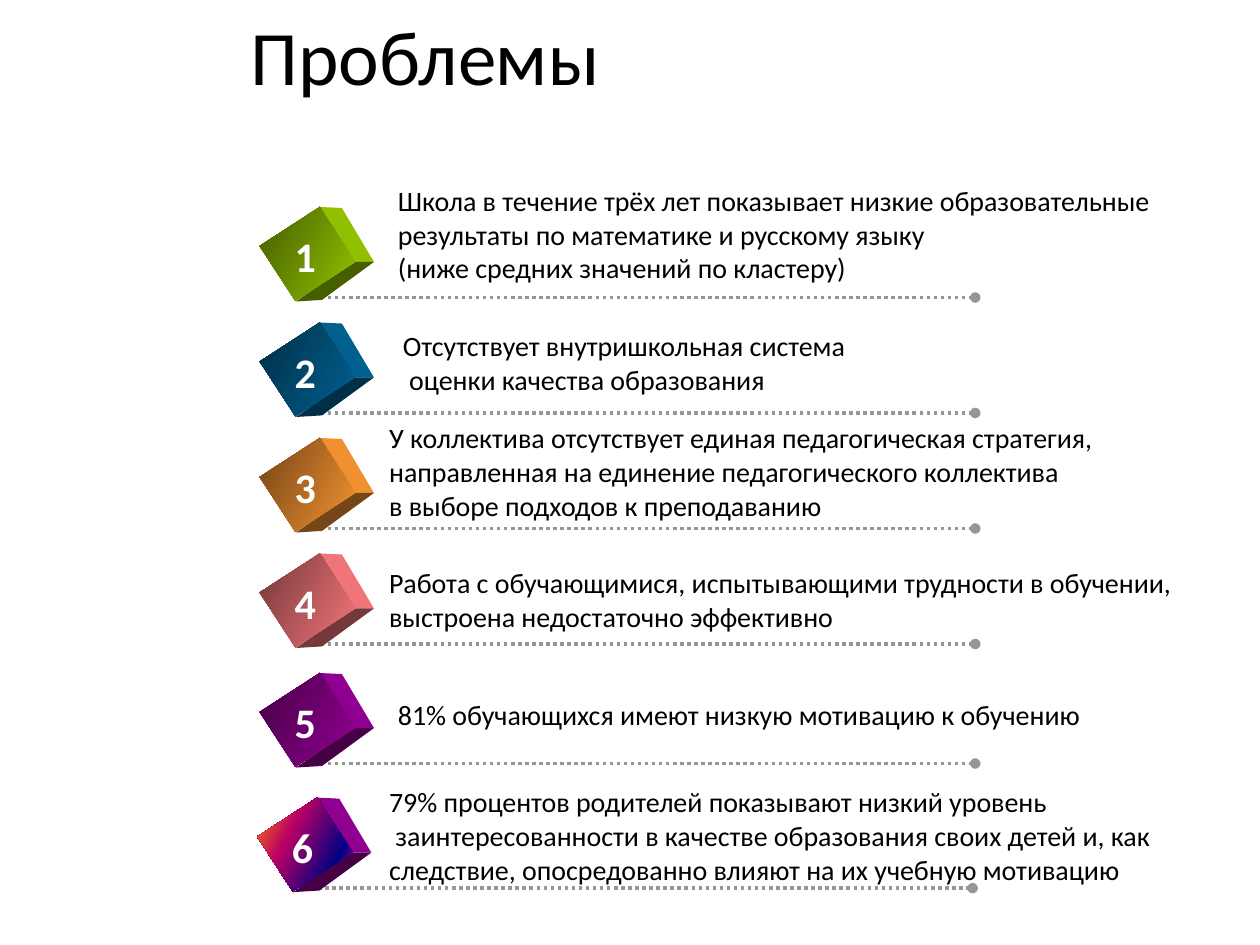
from copy import deepcopy
from dataclasses import dataclass

from lxml import etree
from pptx import Presentation
from pptx.dml.color import RGBColor
from pptx.enum import dml, shapes, text
from pptx.oxml import ns
from pptx.util import Pt


@dataclass(frozen=True)
class Theme:
    font: str = "Calibri"
    ink: str = "000000"
    number: str = "FFFFFF"
    rule: str = "969696"
    title_size: int = 44
    body_size: int = 16
    number_size: int = 24


def shade(color, factor):
    return "".join(f"{round(int(color[i:i + 2], 16) * factor):02X}" for i in (0, 2, 4))


# Corners of the cube's two visible sides, measured from the start of the rule
RIGHT_SIDE = [(3.5, -51.7), (16.1, -51.1), (34.4, -20.3), (22.5, -20.3)]
LOWER_SIDE = [(-10.2, 2.3), (22.5, -20.3), (34.4, -20.3), (4.7, 1.4)]


class ProblemSlide:
    def __init__(self, page, theme):
        self.page = page
        self.theme = theme

    def label(self, parent, lines, left, top, width, height, size, color,
              bold=False, wrap=False, middle=False, spacing=None):
        box = parent.shapes.add_textbox(Pt(left), Pt(top), Pt(width), Pt(height))
        frame = box.text_frame
        frame.word_wrap = wrap
        if middle:
            frame.vertical_anchor = text.MSO_ANCHOR.MIDDLE
        frame.text = "\n".join(lines)
        for para in frame.paragraphs:
            para.line_spacing = spacing
            for span in para.runs:
                span.font.name = self.theme.font
                span.font.size = Pt(size)
                span.font.bold = bold
                span.font.color.rgb = RGBColor.from_string(color)

    def rule(self, group, left, top, length):
        line = group.shapes.add_connector(
            shapes.MSO_CONNECTOR.STRAIGHT, Pt(left), Pt(top), Pt(left + length), Pt(top))
        line.line.color.rgb = RGBColor.from_string(self.theme.rule)
        line.line.width = Pt(2)
        line.line.dash_style = dml.MSO_LINE.ROUND_DOT
        properties = line.element.spPr
        etree.SubElement(properties.find(ns.qn("a:ln")), ns.qn("a:tailEnd"), type="oval")
        etree.SubElement(properties, ns.qn("a:effectLst"))

    def cube_side(self, group, left, top, corners, color):
        points = [(Pt(left + x), Pt(top + y)) for x, y in corners]
        builder = group.shapes.build_freeform(*points[0])
        builder.add_line_segments(points[1:], close=True)
        side = builder.convert_to_shape()
        side.shadow.inherit = False
        side.fill.solid()
        side.fill.fore_color.rgb = RGBColor.from_string(color)
        side.line.fill.background()

    def cube_front(self, group, left, top, stops):
        front = group.shapes.add_shape(
            shapes.MSO_SHAPE.RECTANGLE, Pt(left - 22.3), Pt(top - 45.4), Pt(37.4), Pt(41))
        front.rotation = 57
        front.shadow.inherit = False
        front.line.fill.background()
        front.fill.gradient()
        front.fill.gradient_angle = 210
        stop_list = front.element.spPr.find(".//" + ns.qn("a:gsLst"))
        for _ in range(len(stops) - len(stop_list)):
            stop_list.append(deepcopy(stop_list[0]))
        for stop, (position, color) in zip(front.fill.gradient_stops, stops):
            stop.position = position
            stop.color.rgb = RGBColor.from_string(color)

    def problem(self, number, left, top, color, lines, text_box, stops=None, wrap=False):
        group = self.page.shapes.add_group_shape()
        self.rule(group, left, top, 378)
        self.cube_side(group, left, top, RIGHT_SIDE, shade(color, 0.94))
        self.cube_side(group, left, top, LOWER_SIDE, shade(color, 0.46))
        self.cube_front(group, left, top,
                        stops or [(0, shade(color, 0.96)), (1, shade(color, 0.45))])
        self.label(group, lines, *text_box, self.theme.body_size, self.theme.ink, wrap=wrap)
        self.label(group, [str(number)], left - 18, top - 41.8, 28, 36,
                   self.theme.number_size, self.theme.number, bold=True)


RAINBOW = [(0.04, "FF0000"), (0.12, "66008F"), (0.22, "000082"),
           (0.65, "BA0066"), (1, "FF8200")]

# Rule left and top, cube colour, lines of text, text box
PROBLEMS = [
    (179.3, 170, "99CC00",
     ["Школа в течение трёх лет показывает низкие образовательные",
      "результаты по математике и русскому языку",
      "(ниже средних значений по кластеру)"], (220.3, 101.5, 449.3, 94.3)),
    (179.3, 236, "006699",
     ["Отсутствует внутришкольная система",
      " оценки качества образования"], (223.2, 184.3, 273.6, 46)),
    (179.3, 302, "FF9933",
     ["У коллектива отсутствует единая педагогическая стратегия,",
      "направленная на единение педагогического коллектива",
      "в выборе подходов к преподаванию"], (215.3, 237, 425.5, 94.3)),
    (179.3, 368, "FF7C80",
     ["Работа с обучающимися, испытывающими трудности в обучении,",
      "выстроена недостаточно эффективно"], (215.3, 319.7, 470.9, 75)),
    (179.3, 436.3, "990099",
     ["81% обучающихся имеют низкую мотивацию к обучению"],
     (220.3, 395.3, 409, 55.4)),
    (177.8, 507.5, "990099",
     ["79% процентов родителей показывают низкий уровень",
      " заинтересованности в качестве образования своих детей и, как "
      "следствие, опосредованно влияют на их учебную мотивацию"],
     (215.3, 445, 470.9, 65.5), RAINBOW, True),
]


def main():
    deck = Presentation()
    deck.slide_width, deck.slide_height = Pt(720), Pt(540)
    theme = Theme()
    page = deck.slides.add_slide(deck.slide_layouts[6])
    slide = ProblemSlide(page, theme)
    slide.label(page, ["Проблемы"], 136, 0, 558.7, 69, theme.title_size, theme.ink,
                wrap=True, middle=True, spacing=0.9)
    for number, row in enumerate(PROBLEMS, start=1):
        slide.problem(number, *row)
    deck.save("out.pptx")


if __name__ == "__main__":
    main()
